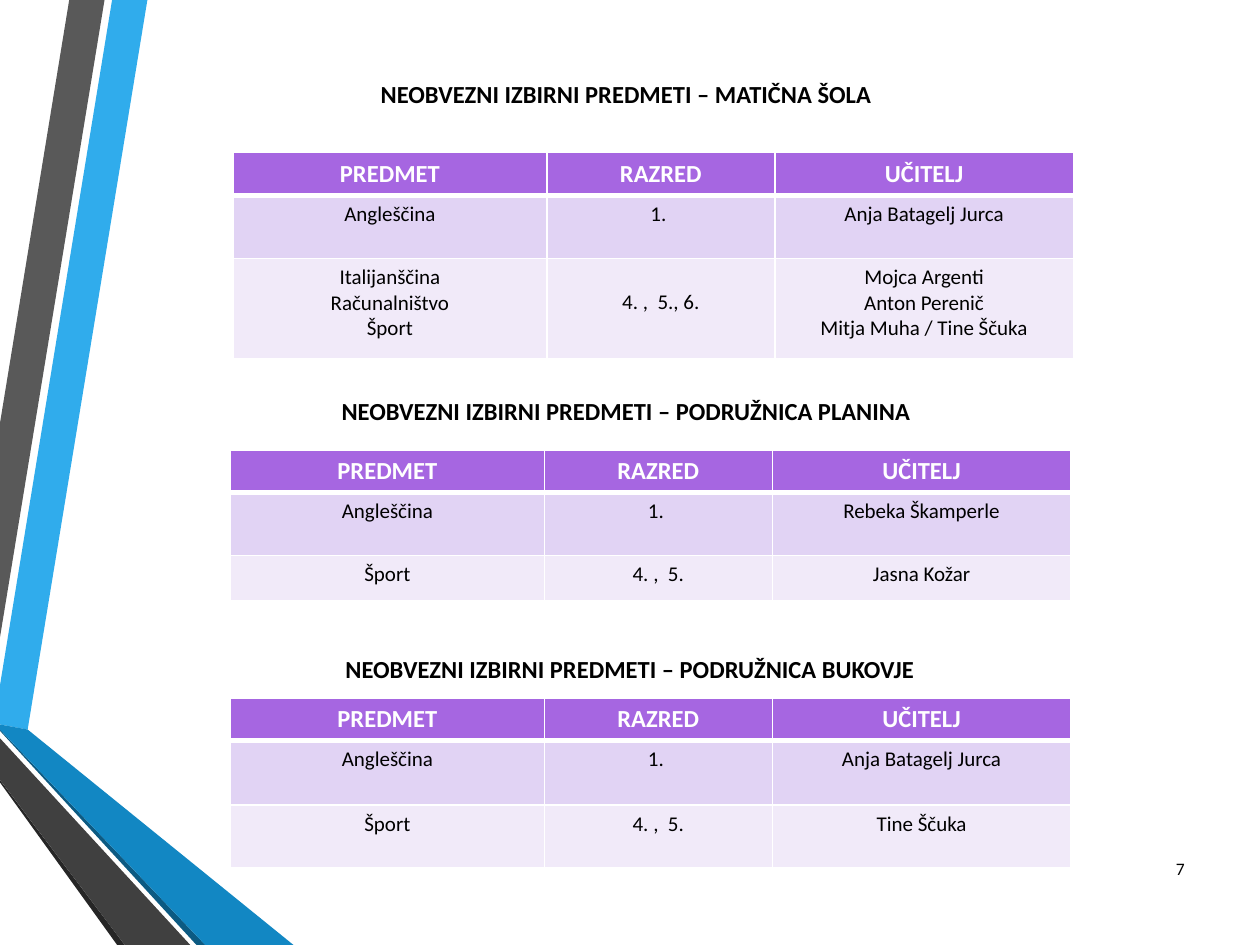
from dataclasses import dataclass

import lxml.etree
import pptx
import pptx.dml.color
import pptx.enum.text
import pptx.oxml.ns
import pptx.util

Inches = pptx.util.Inches
Pt = pptx.util.Pt
ALIGN = pptx.enum.text.PP_ALIGN
ANCHOR = pptx.enum.text.MSO_ANCHOR
qn = pptx.oxml.ns.qn

FONT = "Calibri"
COLORS = {
    "blue": "30ACEC", "dark_blue": "1287C3", "navy": "0C5A82",
    "gray": "595959", "dark_gray": "404040", "charcoal": "262626",
    "header": "A666E1", "odd_row": "E1D3F4", "even_row": "F1EAF9",
    "white": "FFFFFF", "black": "000000",
}
HEADER = ("PREDMET", "RAZRED", "UČITELJ")
COL_WIDTHS = (2.49, 1.81, 2.37)
ROW_FILLS = ("header", "odd_row", "even_row")


@dataclass
class Ribbon:
    color: str
    points: list[tuple[float, float]]


@dataclass
class Section:
    heading: str
    heading_left: float
    heading_top: float
    table_left: float
    table_top: float
    row_heights: tuple[float, ...]
    rows: list[tuple[str, str, str]]


RIBBONS = [
    Ribbon("blue", [(0, 5.44), (0, 5.75), (0.22, 5.79), (1.17, 0), (0.89, 0)]),
    Ribbon("gray", [(0.83, 0), (0.55, 0), (0, 3.36), (0, 5.06)]),
    Ribbon("charcoal", [(0, 6.19), (0, 6.21), (0.93, 7.5), (0.99, 7.5)]),
    Ribbon("navy", [(0, 5.79), (0, 5.8), (1.56, 7.5), (1.63, 7.5)]),
    Ribbon("dark_blue", [(0, 5.79), (1.63, 7.5), (2.33, 7.5), (0.22, 5.79), (0, 5.75)]),
    Ribbon("dark_gray", [(0, 6.19), (0.99, 7.5), (1.51, 7.5), (0, 5.86)]),
]
SECTIONS = [
    Section("MATIČNA ŠOLA", 0.66, 0.6, 1.85, 1.21, (0.34, 0.5, 0.8), [
        ("Angleščina", "1. ", "Anja Batagelj Jurca"),
        ("Italijanščina\nRačunalništvo\nŠport", "4. ,  5., 6.",
         "Mojca Argenti\nAnton Perenič\nMitja Muha / Tine Ščuka"),
    ]),
    Section("PODRUŽNICA PLANINA", 0.66, 3.12, 1.83, 3.57, (0.33, 0.5, 0.36), [
        ("Angleščina", "1. ", "Rebeka Škamperle"),
        ("Šport", "4. ,  5.", "Jasna Kožar"),
    ]),
    Section("PODRUŽNICA BUKOVJE", 0.69, 5.17, 1.83, 5.54, (0.33, 0.51, 0.5), [
        ("Angleščina", "1. ", "Anja Batagelj Jurca"),
        ("Šport", "4. ,  5.", "Tine Ščuka"),
    ]),
]


def rgb(name: str) -> pptx.dml.color.RGBColor:
    return pptx.dml.color.RGBColor.from_string(COLORS[name])


def write(tf, text: str, size: float, color: str = "black",
          bold: bool = False, align=ALIGN.CENTER) -> None:
    tf.text = text
    for p in tf.paragraphs:
        p.alignment = align
        for r in p.runs:
            r.font.name = FONT
            r.font.size = Pt(size)
            r.font.bold = bold
            r.font.color.rgb = rgb(color)


def draw_ribbon(slide, ribbon: Ribbon) -> None:
    points = [(Inches(x), Inches(y)) for x, y in ribbon.points]
    builder = slide.shapes.build_freeform(*points[0], scale=1.0)
    builder.add_line_segments(points[1:], close=True)
    sp = builder.convert_to_shape()
    sp.shadow.inherit = False
    sp.fill.solid()
    sp.fill.fore_color.rgb = rgb(ribbon.color)
    sp.line.fill.background()


def draw_heading(sp, section: Section) -> None:
    sp.left, sp.top = Inches(section.heading_left), Inches(section.heading_top)
    sp.width, sp.height = Inches(8.62), Inches(0.44)
    tf = sp.text_frame
    write(tf, f"NEOBVEZNI IZBIRNI PREDMETI – {section.heading}", 14, bold=True)
    tf.word_wrap = True
    tf.auto_size = pptx.enum.text.MSO_AUTO_SIZE.NONE
    tf.vertical_anchor = ANCHOR.TOP
    tf.paragraphs[0].line_spacing = 0.9


def set_borders(cell, top: float, bottom: float) -> None:
    tc_pr = cell._tc.get_or_add_tcPr()
    sides = (("a:lnL", 1), ("a:lnR", 1), ("a:lnT", top), ("a:lnB", bottom))
    for i, (tag, width) in enumerate(sides):
        ln = lxml.etree.Element(qn(tag), w=str(Pt(width)))
        fill = lxml.etree.SubElement(ln, qn("a:solidFill"))
        lxml.etree.SubElement(fill, qn("a:srgbClr"), val=COLORS["white"])
        tc_pr.insert(i, ln)


def draw_table(slide, section: Section) -> None:
    rows = [HEADER, *section.rows]
    table = slide.shapes.add_table(
        len(rows), len(HEADER), Inches(section.table_left), Inches(section.table_top),
        Inches(sum(COL_WIDTHS)), Inches(sum(section.row_heights))).table
    for column, width in zip(table.columns, COL_WIDTHS):
        column.width = Inches(width)
    for i, texts in enumerate(rows):
        table.rows[i].height = Inches(section.row_heights[i])
        line_count = max(text.count("\n") for text in texts) + 1
        for j, text in enumerate(texts):
            cell = table.cell(i, j)
            if i == 0:
                write(cell.text_frame, text, 14, "white", bold=True)
            else:
                write(cell.text_frame, text, 12)
            spare_lines = line_count - 1 - text.count("\n")
            cell.margin_top = Inches(0.05 + 0.1 * spare_lines)
            cell.fill.solid()
            cell.fill.fore_color.rgb = rgb(ROW_FILLS[i])
            set_borders(cell, 3 if i == 1 else 1, 3 if i == 0 else 1)


def draw_page_number(slide, number: int) -> None:
    sp = slide.shapes.add_textbox(Inches(9.05), Inches(6.69), Inches(0.45), Inches(0.4))
    tf = sp.text_frame
    write(tf, str(number), 10, align=ALIGN.RIGHT)
    tf.word_wrap = True
    tf.vertical_anchor = ANCHOR.MIDDLE


def main() -> None:
    prs = pptx.Presentation()
    prs.slide_width, prs.slide_height = Inches(10), Inches(7.5)
    slide = prs.slides.add_slide(prs.slide_layouts[5])
    for ribbon in RIBBONS:
        draw_ribbon(slide, ribbon)
    for i, section in enumerate(SECTIONS):
        sp = slide.shapes.title if i == 0 else slide.shapes.add_textbox(0, 0, 0, 0)
        draw_heading(sp, section)
        draw_table(slide, section)
    draw_page_number(slide, 7)
    prs.save("out.pptx")


if __name__ == "__main__":
    main()
